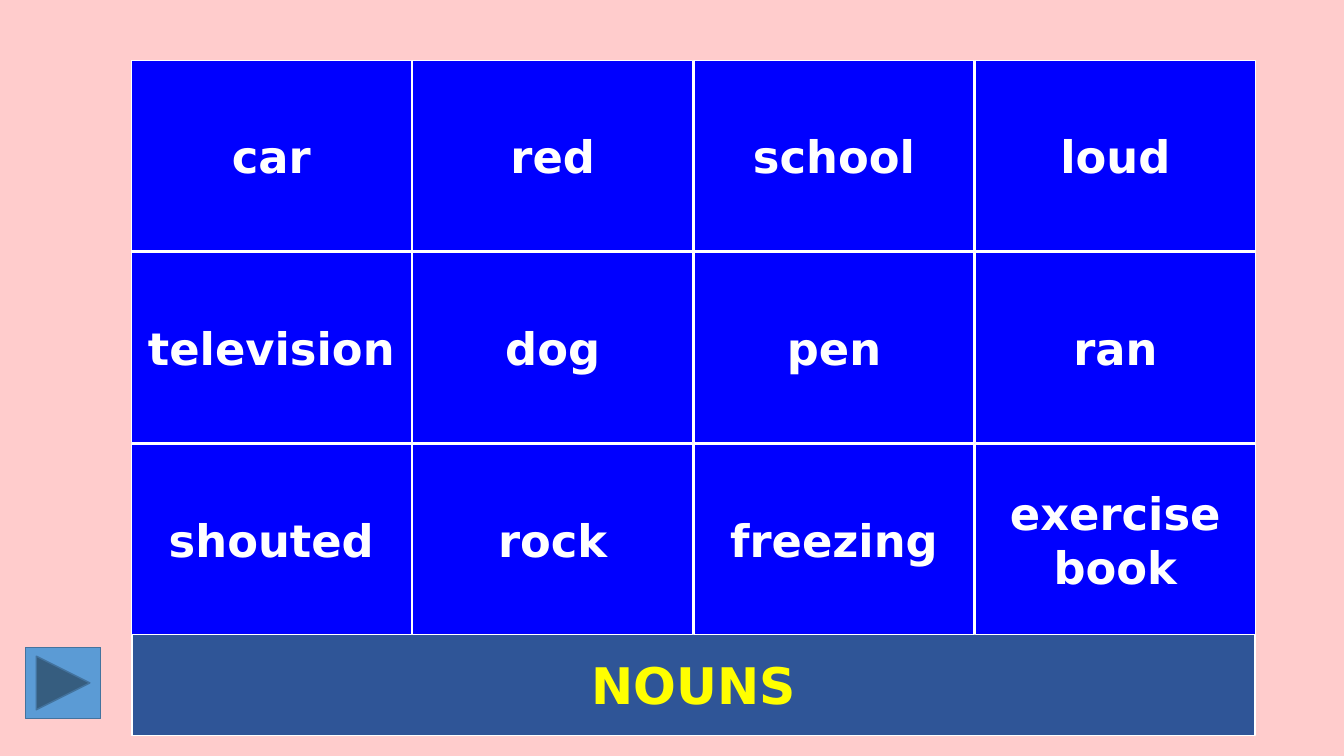
import dataclasses

import pptx
import pptx.dml.color
import pptx.enum.shapes
import pptx.enum.text
import pptx.util

Cm = pptx.util.Cm
Kind = pptx.enum.shapes.MSO_SHAPE


@dataclasses.dataclass(frozen=True)
class Theme:
    back: str = "FFCCCC"
    card: str = "0000FF"
    band: str = "2F5597"
    key: str = "5B9BD5"
    rim: str = "43739E"
    light: str = "FFFFFF"
    gold: str = "FFFF00"
    font: str = "DejaVu Sans"
    word: int = 32
    title: int = 36
    edge: int = 1


@dataclasses.dataclass(frozen=True)
class Box:
    left: float
    top: float
    wide: float
    high: float


THEME = Theme()
WORDS = [
    ["car", "red", "school", "loud"],
    ["television", "dog", "pen", "ran"],
    ["shouted", "rock", "freezing", "exercise book"],
]


def tint(code):
    return pptx.dml.color.RGBColor.from_string(code)


def apply(target, values):
    for name, value in values.items():
        setattr(target, name, value)


def draw(slide, kind, box, fill, line):
    shape = slide.shapes.add_shape(
        kind, Cm(box.left), Cm(box.top), Cm(box.wide), Cm(box.high)
    )
    shape.shadow.inherit = False
    shape.fill.solid()
    shape.fill.fore_color.rgb = tint(fill)
    shape.line.color.rgb = tint(line)
    shape.line.width = pptx.util.Pt(THEME.edge)
    return shape


def label(shape, text, size, color):
    frame = shape.text_frame
    apply(frame, {
        "text": text,
        "word_wrap": True,
        "vertical_anchor": pptx.enum.text.MSO_ANCHOR.MIDDLE,
    })
    para = frame.paragraphs[0]
    para.alignment = pptx.enum.text.PP_ALIGN.CENTER
    font = para.runs[0].font
    apply(font, {"name": THEME.font, "size": pptx.util.Pt(size), "bold": True})
    font.color.rgb = tint(color)


def add_band(slide, box, text):
    shape = draw(slide, Kind.RECTANGLE, box, THEME.band, THEME.light)
    label(shape, text, THEME.title, THEME.gold)


def add_cards(slide, box, words, gap=0.03):
    wide = (box.wide + gap) / len(words[0])
    high = (box.high + gap) / len(words)
    for row, line in enumerate(words):
        for col, word in enumerate(line):
            cell = Box(
                box.left + col * wide, box.top + row * high, wide - gap, high - gap
            )
            shape = draw(slide, Kind.RECTANGLE, cell, THEME.card, THEME.light)
            label(shape, word, THEME.word, THEME.light)


def add_key(slide, box):
    draw(slide, Kind.ACTION_BUTTON_FORWARD_OR_NEXT, box, THEME.key, THEME.rim)


def main():
    deck = pptx.Presentation()
    apply(deck, {"slide_width": Cm(33.87), "slide_height": Cm(19.05)})
    slide = deck.slides.add_slide(deck.slide_layouts[6])
    slide.background.fill.solid()
    slide.background.fill.fore_color.rgb = tint(THEME.back)
    add_band(slide, Box(3.33, 15.95, 28.3, 2.59), "NOUNS")
    add_cards(slide, Box(3.31, 1.52, 28.33, 14.47), WORDS)
    add_key(slide, Box(0.64, 16.31, 1.9, 1.8))
    deck.save("out.pptx")


if __name__ == "__main__":
    main()
